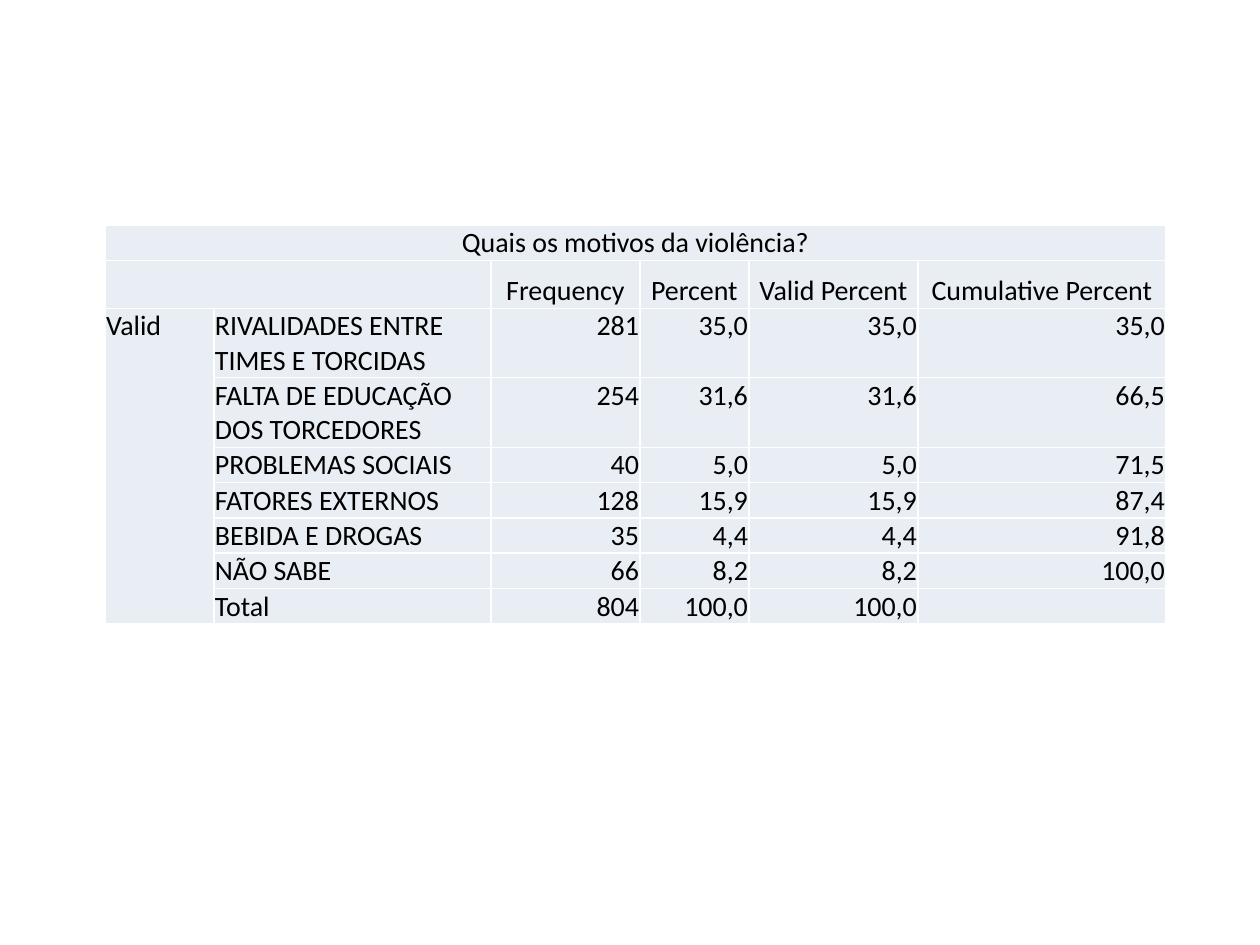
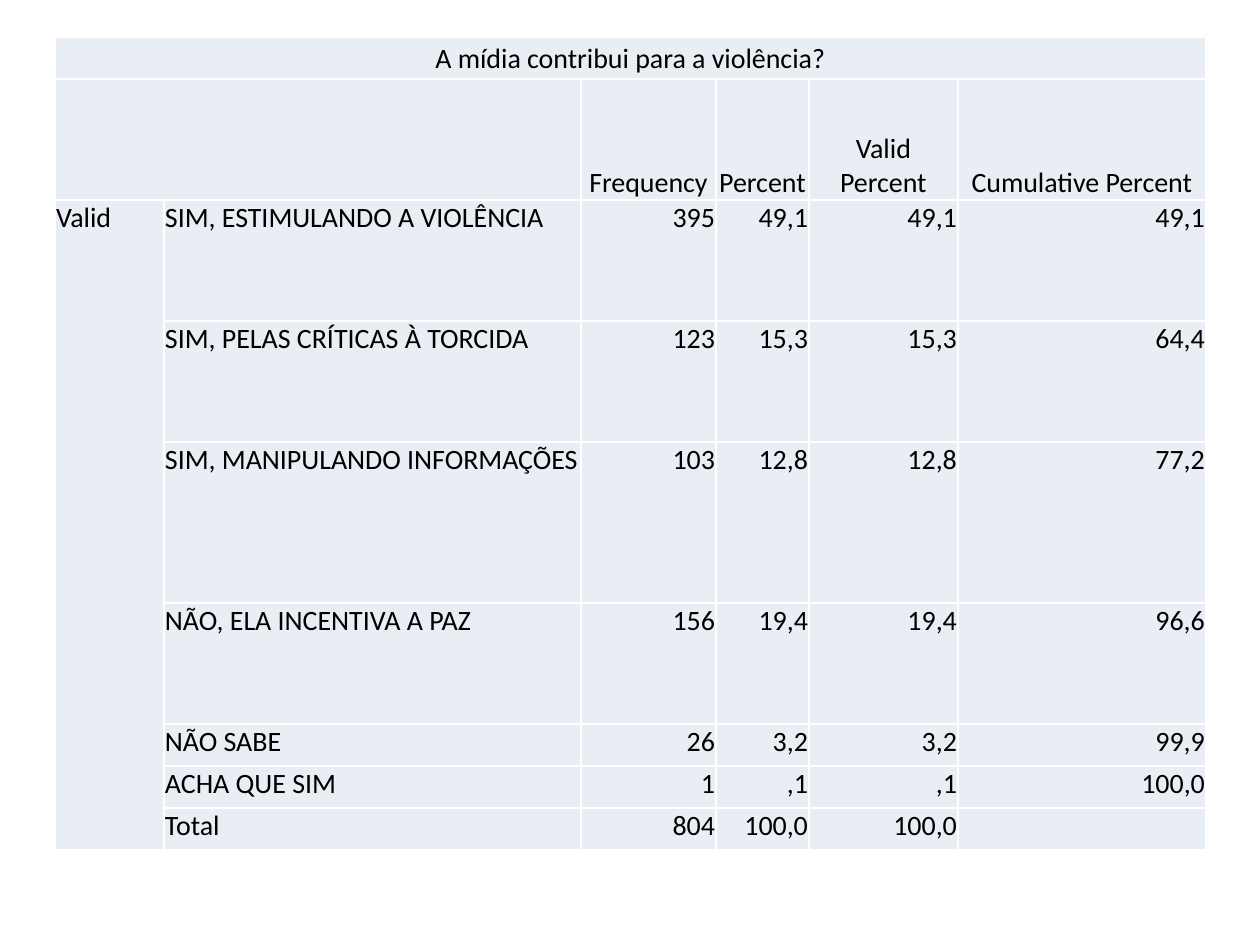
"""Build two slides with frequency tables from a survey on violence in football."""
from lxml.etree import SubElement
from pptx import Presentation
from pptx.dml.color import RGBColor
from pptx.enum.text import MSO_ANCHOR as Anchor, PP_ALIGN as Align
from pptx.oxml.ns import qn
from pptx.util import Emu, Pt

PX = 914400 // 126
SLIDE_SIZE = (1260, 945)
CELL_FILL = RGBColor(0xE9, 0xED, 0xF4)
BORDER = RGBColor(0xFF, 0xFF, 0xFF)
INK = RGBColor(0x00, 0x00, 0x00)
FONT, TEXT_PT, BORDER_PT = "Calibri", 16, 1

HEADINGS = ("Frequency", "Percent", "Valid Percent", "Cumulative Percent")
GROUP = "Valid"

SURVEYS = [
    {
        "question": "Quais os motivos da violência?",
        "corner": (105, 225),
        "height": 393,
        "columns": (109, 277, 149, 109, 169, 248),
        "rows": (31, 48, 44, 44, 28, 28, 28, 28, 28),
        "answers": [
            ("RIVALIDADES ENTRE TIMES E TORCIDAS", "281", "35,0", "35,0", "35,0"),
            ("FALTA DE EDUCAÇÃO DOS TORCEDORES", "254", "31,6", "31,6", "66,5"),
            ("PROBLEMAS SOCIAIS", "40", "5,0", "5,0", "71,5"),
            ("FATORES EXTERNOS", "128", "15,9", "15,9", "87,4"),
            ("BEBIDA E DROGAS", "35", "4,4", "4,4", "91,8"),
            ("NÃO SABE", "66", "8,2", "8,2", "100,0"),
            ("Total", "804", "100,0", "100,0", ""),
        ],
    },
    {
        "question": "A mídia contribui para a violência?",
        "corner": (55, 37),
        "height": 813,
        "columns": (109, 417, 135, 93, 149, 248),
        "rows": (42, 121, 121, 121, 161, 121, 42, 42, 42),
        "answers": [
            ("SIM, ESTIMULANDO A VIOLÊNCIA", "395", "49,1", "49,1", "49,1"),
            ("SIM, PELAS CRÍTICAS À TORCIDA", "123", "15,3", "15,3", "64,4"),
            ("SIM, MANIPULANDO INFORMAÇÕES", "103", "12,8", "12,8", "77,2"),
            ("NÃO, ELA INCENTIVA A PAZ", "156", "19,4", "19,4", "96,6"),
            ("NÃO SABE", "26", "3,2", "3,2", "99,9"),
            ("ACHA QUE SIM", "1", ",1", ",1", "100,0"),
            ("Total", "804", "100,0", "100,0", ""),
        ],
    },
]


def px(length):
    return Emu(length * PX)


def add_borders(cell):
    properties = cell._tc.get_or_add_tcPr()
    for side in ("a:lnL", "a:lnR", "a:lnT", "a:lnB"):
        line = SubElement(properties, qn(side), w=str(Pt(BORDER_PT)))
        SubElement(SubElement(line, qn("a:solidFill")), qn("a:srgbClr"), val=str(BORDER))


def fill_cell(cell, text, align, anchor):
    add_borders(cell)
    cell.fill.solid()
    cell.fill.fore_color.rgb = CELL_FILL
    cell.margin_left = cell.margin_right = cell.margin_top = px(1)
    cell.margin_bottom = 0
    cell.vertical_anchor = anchor
    cell.text_frame.text = text
    paragraph = cell.text_frame.paragraphs[0]
    paragraph.alignment = align
    paragraph._p.get_or_add_endParaRPr().set("sz", str(TEXT_PT * 100))
    for run in paragraph.runs:
        run.font.name, run.font.size = FONT, Pt(TEXT_PT)
        run.font.color.rgb = INK


def cell_style(row, column):
    if row == 0:
        return Align.CENTER, Anchor.MIDDLE
    if row == 1:
        return Align.CENTER, Anchor.BOTTOM
    return (Align.LEFT if column < 2 else Align.RIGHT), Anchor.TOP


def add_survey(slide, survey):
    columns, rows = survey["columns"], survey["rows"]
    left, top = survey["corner"]
    frame = slide.shapes.add_table(len(rows), len(columns), px(left), px(top),
                                   px(sum(columns)), px(survey["height"]))
    table = frame.table
    table.first_row = table.horz_banding = False
    for column, width in zip(table.columns, columns):
        column.width = px(width)
    for row, height in zip(table.rows, rows):
        row.height = px(height)
    frame.height = px(survey["height"])

    grid = [(survey["question"], *[""] * 5), ("", "", *HEADINGS)]
    grid += [("" if i else GROUP, *answer) for i, answer in enumerate(survey["answers"])]
    for r, texts in enumerate(grid):
        for c, text in enumerate(texts):
            fill_cell(table.cell(r, c), text, *cell_style(r, c))

    last_row, last_column = len(rows) - 1, len(columns) - 1
    for start, end in (((0, 0), (0, last_column)), ((1, 0), (1, 1)), ((2, 0), (last_row, 0))):
        table.cell(*start).merge(table.cell(*end))


def main():
    deck = Presentation()
    deck.slide_width, deck.slide_height = map(px, SLIDE_SIZE)
    blank = deck.slide_layouts[6]
    for survey in SURVEYS:
        add_survey(deck.slides.add_slide(blank), survey)
    deck.save("out.pptx")


if __name__ == "__main__":
    main()
